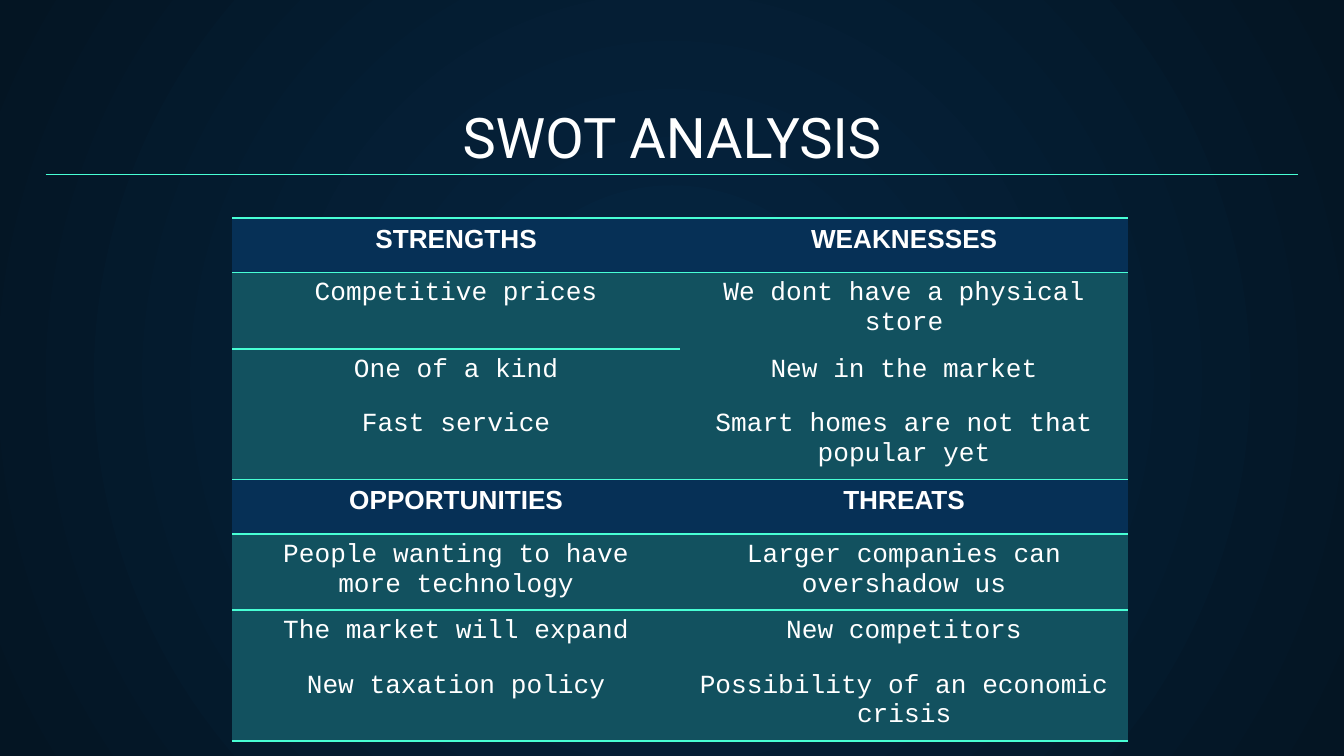
from dataclasses import dataclass

from lxml import etree
from pptx import Presentation
from pptx.dml.color import RGBColor
from pptx.enum.shapes import MSO_CONNECTOR
from pptx.enum.text import MSO_ANCHOR, PP_ALIGN
from pptx.oxml.ns import qn
from pptx.util import Pt

CENTER = PP_ALIGN.CENTER
BOTTOM = MSO_ANCHOR.BOTTOM
STRAIGHT = MSO_CONNECTOR.STRAIGHT

WHITE = "FFFFFF"
MINT = "48FFD5"
NAVY = "063056"
TEAL = "12515F"
GLOW = "052643"
NIGHT = "041523"

LEFT_EDGE, RIGHT_EDGE = 24.5, 695.5
RULE_Y = 93.6
GRID_LEFT, GRID_TOP = 124.4, 116.8
COLUMN_WIDTH, ROW_HEIGHT = 240, 29.2


@dataclass(frozen=True)
class Quadrant:
    heading: str
    points: tuple[str, ...]
    row: int
    column: int
    ruled_rows: tuple[int, ...]


QUADRANTS = (
    Quadrant("STRENGTHS", ("Competitive prices", "One of a kind", "Fast service"),
             0, 0, (0, 1, 2, 4)),
    Quadrant("WEAKNESSES", ("We dont have a physical store", "New in the market",
                            "Smart homes are not that popular yet"),
             0, 1, (0, 1, 4)),
    Quadrant("OPPORTUNITIES", ("People wanting to have more technology",
                               "The market will expand", "New taxation policy"),
             4, 0, (0, 1, 2, 4)),
    Quadrant("THREATS", ("Larger companies can overshadow us", "New competitors",
                         "Possibility of an economic crisis"),
             4, 1, (0, 1, 2, 4)),
)


def color(value: str) -> RGBColor:
    return RGBColor.from_string(value)


def write(frame, text: str, font_name: str, size: float, bold: bool = False) -> None:
    frame.text = text
    paragraph = frame.paragraphs[0]
    paragraph.alignment = CENTER
    font = paragraph.runs[0].font
    font.name = font_name
    font.size = Pt(size)
    font.bold = bold
    font.color.rgb = color(WHITE)


def paint_background(slide) -> None:
    fill = slide.background.fill
    fill.gradient()
    for stop, shade, position in zip(fill.gradient_stops, (GLOW, NIGHT), (0, 1)):
        stop.color.rgb = color(shade)
        stop.position = position
    gradient = next(slide.element.iter(qn("a:gradFill")))
    linear = gradient.find(qn("a:lin"))
    if linear is not None:
        gradient.remove(linear)
    radial = etree.SubElement(gradient, qn("a:path"), {"path": "circle"})
    etree.SubElement(radial, qn("a:fillToRect"), dict.fromkeys("ltrb", "50000"))


def add_border(properties, side: str, visible: bool) -> None:
    border = etree.SubElement(properties, qn(f"a:ln{side}"), {"w": str(Pt(1))})
    if visible:
        solid = etree.SubElement(border, qn("a:solidFill"))
        etree.SubElement(solid, qn("a:srgbClr"), {"val": MINT})
    else:
        etree.SubElement(border, qn("a:noFill"))


def fill_quadrant(table, quadrant: Quadrant) -> None:
    for offset, text in enumerate((quadrant.heading, *quadrant.points)):
        heading = offset == 0
        cell = table.cell(quadrant.row + offset, quadrant.column)
        write(cell.text_frame, text, "Arial" if heading else "Courier New", 14, heading)
        borders = {"L": False, "R": False,
                   "T": offset in quadrant.ruled_rows,
                   "B": offset + 1 in quadrant.ruled_rows}
        properties = cell._tc.get_or_add_tcPr()
        for side, visible in borders.items():
            add_border(properties, side, visible)
        cell.fill.solid()
        cell.fill.fore_color.rgb = color(NAVY if heading else TEAL)


def add_title(slide) -> None:
    title = slide.shapes.add_textbox(Pt(LEFT_EDGE), Pt(50.4),
                                     Pt(RIGHT_EDGE - LEFT_EDGE), Pt(47.5))
    frame = title.text_frame
    frame.word_wrap = True
    frame.vertical_anchor = BOTTOM
    frame.margin_top = frame.margin_bottom = Pt(7.2)
    write(frame, "SWOT ANALYSIS", "Roboto", 30)

    underline = slide.shapes.add_connector(STRAIGHT, Pt(LEFT_EDGE), Pt(RULE_Y),
                                           Pt(RIGHT_EDGE), Pt(RULE_Y))
    underline.line.color.rgb = color(MINT)
    underline.line.width = Pt(0.75)
    etree.SubElement(underline._element.spPr, qn("a:effectLst"))


def add_swot_grid(slide) -> None:
    rows, columns = 8, 2
    table = slide.shapes.add_table(rows, columns, Pt(GRID_LEFT), Pt(GRID_TOP),
                                   Pt(columns * COLUMN_WIDTH),
                                   Pt(rows * ROW_HEIGHT)).table
    table.first_row = False
    table.horz_banding = False
    for row in table.rows:
        row.height = Pt(ROW_HEIGHT)
    for quadrant in QUADRANTS:
        fill_quadrant(table, quadrant)


def main() -> None:
    presentation = Presentation()
    presentation.slide_width = Pt(720)
    presentation.slide_height = Pt(405)
    slide = presentation.slides.add_slide(presentation.slide_layouts[6])
    paint_background(slide)
    add_title(slide)
    add_swot_grid(slide)
    presentation.save("out.pptx")


if __name__ == "__main__":
    main()
